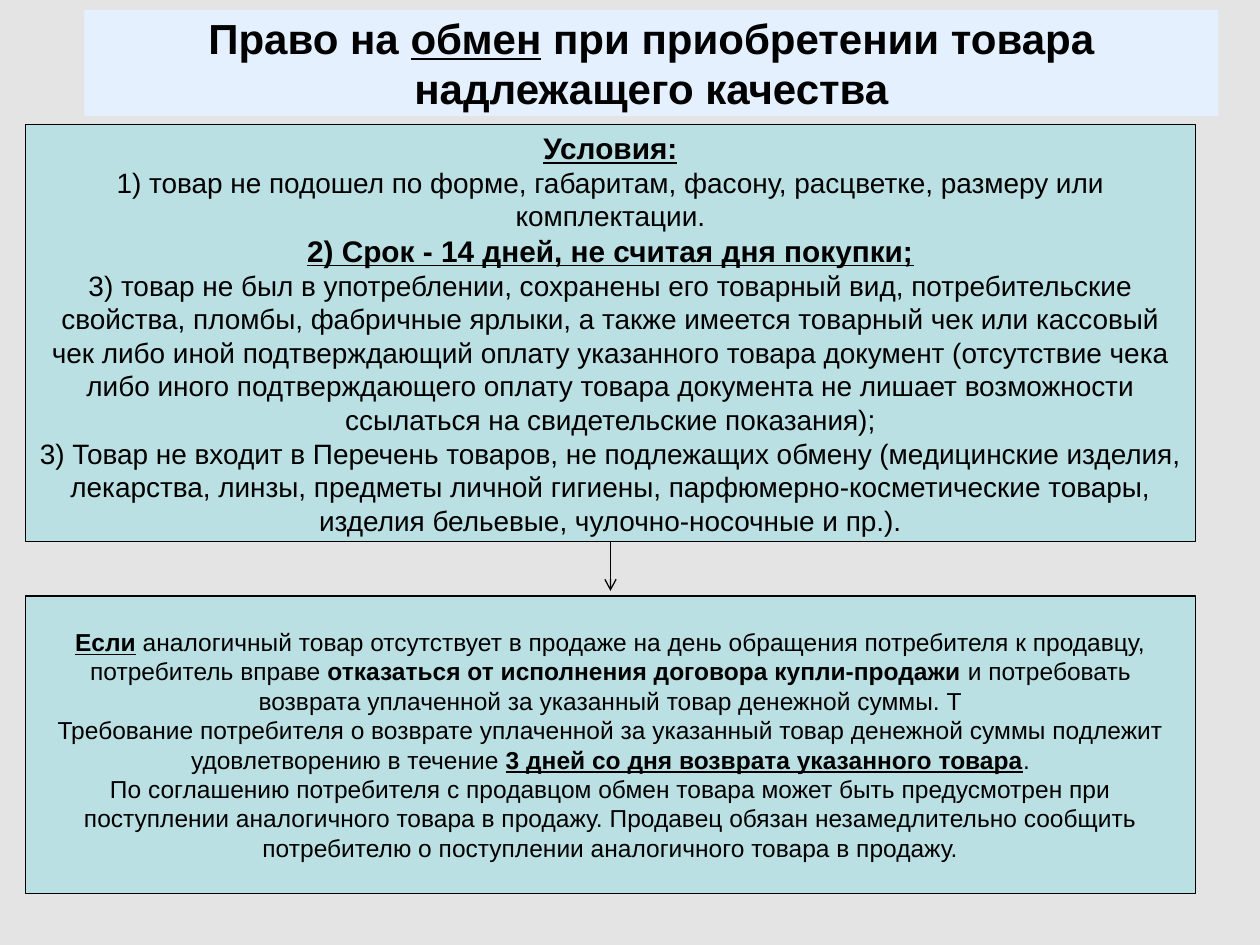
from dataclasses import dataclass

from lxml.etree import SubElement
from pptx import Presentation
from pptx.dml.color import RGBColor
from pptx.enum.shapes import MSO_CONNECTOR as Connector, MSO_SHAPE as Shape
from pptx.enum.text import MSO_ANCHOR as Anchor, PP_ALIGN as Align
from pptx.oxml.ns import qn
from pptx.slide import Slide
from pptx.util import Inches, Pt

COLUMNS, ROWS = 100, 75
WIDTH, HEIGHT = Inches(10), Inches(7.5)
FONT = "Arial"
LINE_WIDTH = Pt(0.75)
COLORS = {"back": "E4E4E4", "title": "E5F0FF", "panel": "BBE0E3", "ink": "000000"}


@dataclass(frozen=True)
class Span:
    text: str
    bold: bool = False
    underline: bool = False
    size: float | None = None


@dataclass(frozen=True)
class Panel:
    left: float
    top: float
    width: float
    height: float
    fill: str
    outlined: bool
    size: float
    paras: list[list[Span]]

    @property
    def middle(self) -> float:
        return self.left + self.width / 2

    @property
    def bottom(self) -> float:
        return self.top + self.height


TITLE = Panel(6.7, 0.8, 90, 8.4, "title", False, 24, [[
    Span("Право на ", bold=True),
    Span("обмен", bold=True, underline=True),
    Span(" при приобретении товара надлежащего качества", bold=True),
]])

CONDITIONS = Panel(2, 9.9, 92.9, 33.1, "panel", True, 16, [
    [Span("Условия:", True, True, 17)],
    [Span("1) товар не подошел по форме, габаритам, фасону, расцветке, размеру или "
          "комплектации.")],
    [Span("2) Срок - 14 дней, не считая дня покупки;", True, True, 17)],
    [Span("3) товар не был в употреблении, сохранены его товарный вид, потребительские "
          "свойства, пломбы, фабричные ярлыки, а также имеется товарный чек или кассовый "
          "чек либо иной подтверждающий оплату указанного товара документ (отсутствие чека "
          "либо иного подтверждающего оплату товара документа не лишает возможности "
          "ссылаться на свидетельские показания);")],
    [Span("3) Товар не входит в Перечень товаров, не подлежащих обмену (медицинские изделия, "
          "лекарства, линзы, предметы личной гигиены, парфюмерно-косметические товары, "
          "изделия бельевые, чулочно-носочные и пр.).")],
])

REFUND = Panel(2, 47.3, 92.9, 23.6, "panel", True, 14, [
    [
        Span("Если", True, True),
        Span(" аналогичный товар отсутствует в продаже на день обращения потребителя к "
             "продавцу, потребитель вправе "),
        Span("отказаться от исполнения договора купли-продажи ", bold=True),
        Span("и потребовать возврата уплаченной за указанный товар денежной суммы. Т"),
    ],
    [
        Span("Требование потребителя о возврате уплаченной за указанный товар денежной суммы "
             "подлежит удовлетворению в течение "),
        Span("3 дней со дня возврата указанного товара", True, True),
        Span("."),
    ],
    [Span("По соглашению потребителя с продавцом обмен товара может быть предусмотрен при "
          "поступлении аналогичного товара в продажу. Продавец обязан незамедлительно "
          "сообщить потребителю о поступлении аналогичного товара в продажу.")],
])


def color(name: str) -> RGBColor:
    return RGBColor.from_string(COLORS[name])


def across(columns: float) -> int:
    return round(WIDTH * columns / COLUMNS)


def down(rows: float) -> int:
    return round(HEIGHT * rows / ROWS)


def draw_panel(slide: Slide, panel: Panel) -> None:
    box = slide.shapes.add_shape(
        Shape.RECTANGLE, across(panel.left), down(panel.top),
        across(panel.width), down(panel.height))
    box.shadow.inherit = False
    box.fill.solid()
    box.fill.fore_color.rgb = color(panel.fill)
    if panel.outlined:
        box.line.color.rgb = color("ink")
        box.line.width = LINE_WIDTH
    else:
        box.line.fill.background()
    frame = box.text_frame
    frame.word_wrap = True
    frame.vertical_anchor = Anchor.MIDDLE
    for index, spans in enumerate(panel.paras):
        para = frame.add_paragraph() if index else frame.paragraphs[0]
        para.alignment = Align.CENTER
        for span in spans:
            run = para.add_run()
            run.text = span.text
            font = run.font
            font.name = FONT
            font.size = Pt(span.size or panel.size)
            font.bold = span.bold
            font.underline = span.underline
            font.color.rgb = color("ink")


def draw_arrow(slide: Slide, column: float, start: float, end: float) -> None:
    arrow = slide.shapes.add_connector(
        Connector.STRAIGHT, across(column), down(start), across(column), down(end))
    arrow.line.color.rgb = color("ink")
    arrow.line.width = LINE_WIDTH
    properties = arrow.element.spPr
    SubElement(properties.find(qn("a:ln")), qn("a:tailEnd"), type="arrow")
    SubElement(properties, qn("a:effectLst"))


def main() -> None:
    deck = Presentation()
    deck.slide_width, deck.slide_height = WIDTH, HEIGHT
    slide = deck.slides.add_slide(deck.slide_layouts[6])
    slide.background.fill.solid()
    slide.background.fill.fore_color.rgb = color("back")
    for panel in (TITLE, REFUND, CONDITIONS):
        draw_panel(slide, panel)
    draw_arrow(slide, CONDITIONS.middle, CONDITIONS.bottom, REFUND.top - 0.4)
    deck.save("out.pptx")


if __name__ == "__main__":
    main()
